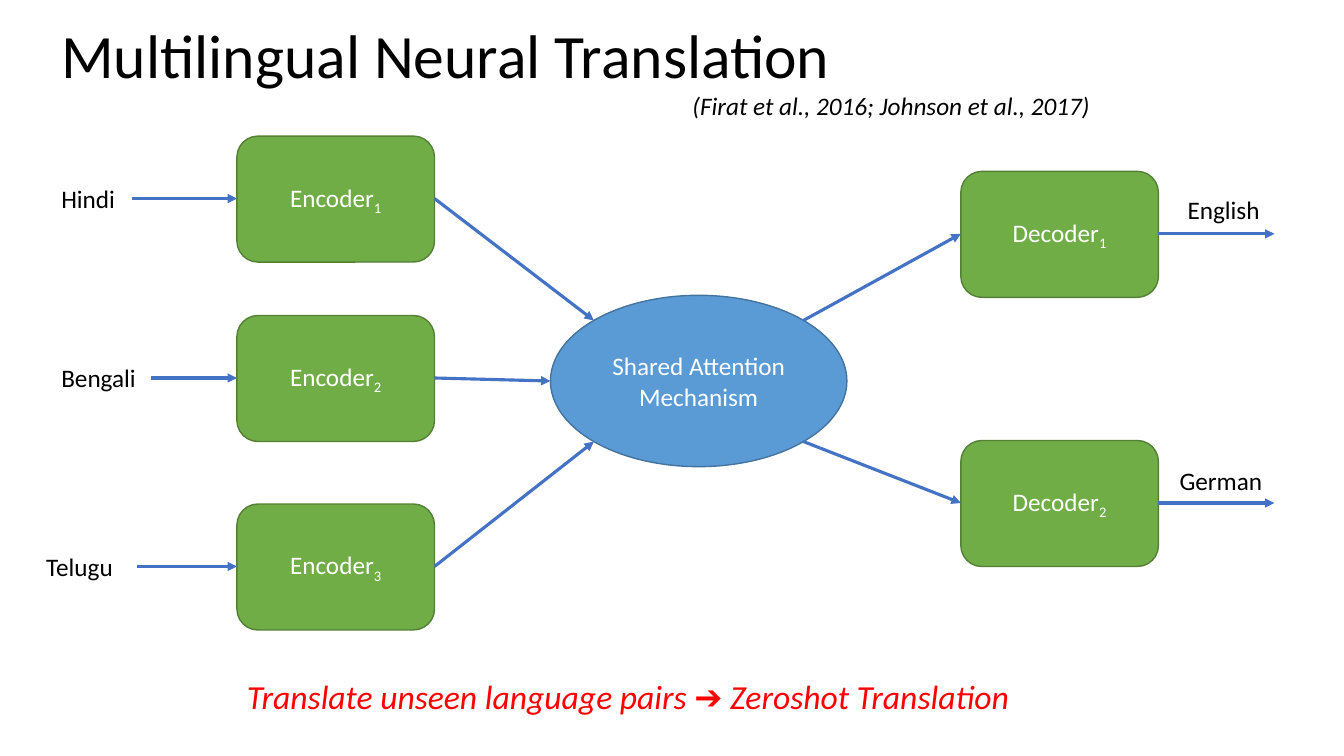
from math import sqrt

from lxml.etree import SubElement
from pptx import Presentation
from pptx.dml.color import RGBColor
from pptx.enum.shapes import MSO_CONNECTOR, MSO_SHAPE
from pptx.enum.text import MSO_ANCHOR, PP_ALIGN
from pptx.oxml.ns import qn
from pptx.util import Emu, Pt

SCALE = 9144  # EMU per px, 100 px to the inch
BLOCK_WIDTH, BLOCK_HEIGHT = 196, 125

# Language, label left, label width, arrow start, block top
SOURCES = [
    ("Hindi", 51, 80, 131, 135),
    ("Bengali", 51, 100, 150, 313),
    ("Telugu", 36, 100, 136, 500),
]
# Language, label left, label top, block top
TARGETS = [("English", 1168, 188, 170), ("German", 1160, 457, 437)]


def px(length):
    return Emu(round(length * SCALE))


def color(value):
    return RGBColor.from_string(value)


def write(frame, text, subscript="", size=18, fill="000000", italic=False,
          align=PP_ALIGN.LEFT, anchor=MSO_ANCHOR.TOP, spacing=None):
    frame.word_wrap = True
    frame.vertical_anchor = anchor
    para = frame.paragraphs[0]
    para.alignment = align
    para.line_spacing = spacing
    for part in filter(None, (text, subscript)):
        span = para.add_run()
        span.text = part
        span.font.name = "Calibri"
        span.font.size = Pt(size)
        span.font.italic = italic
        span.font.color.rgb = color(fill)
    if subscript:
        span.font._element.set("baseline", "-25000")


def add_label(page, box, text, **text_format):
    label = page.shapes.add_textbox(*map(px, box))
    write(label.text_frame, text, **text_format)


def add_node(page, kind, box, fill, outline, text, subscript=""):
    node = page.shapes.add_shape(kind, *map(px, box))
    node.shadow.inherit = False
    node.fill.solid()
    node.fill.fore_color.rgb = color(fill)
    node.line.color.rgb = color(outline)
    node.line.width = Pt(1)
    write(node.text_frame, text, subscript, fill="FFFFFF",
          align=PP_ALIGN.CENTER, anchor=MSO_ANCHOR.MIDDLE)


def add_block(page, left, top, name, number):
    add_node(page, MSO_SHAPE.ROUNDED_RECTANGLE,
             (left, top, BLOCK_WIDTH, BLOCK_HEIGHT),
             "70AD47", "538035", name, str(number))


def add_arrow(page, start, end):
    arrow = page.shapes.add_connector(
        MSO_CONNECTOR.STRAIGHT, *map(px, start + end))
    arrow.line.color.rgb = color("4472C4")
    arrow.line.width = Pt(2.25)
    SubElement(arrow.line._get_or_add_ln(), qn("a:tailEnd"), type="triangle")
    SubElement(arrow._element.spPr, qn("a:effectLst"))


def add_encoders(page, left, ports):
    for number, (source, port) in enumerate(zip(SOURCES, ports), 1):
        language, label_left, label_width, arrow_start, top = source
        middle = top + BLOCK_HEIGHT // 2
        add_block(page, left, top, "Encoder", number)
        add_label(page, (label_left, middle - 20, label_width, 40), language)
        add_arrow(page, (arrow_start, middle), (left, middle))
        add_arrow(page, (left + BLOCK_WIDTH, middle), port)


def add_decoders(page, left, ports):
    right = left + BLOCK_WIDTH
    for number, (target, port) in enumerate(zip(TARGETS, ports), 1):
        language, label_left, label_top, top = target
        middle = top + BLOCK_HEIGHT // 2
        add_block(page, left, top, "Decoder", number)
        add_label(page, (label_left, label_top, 128, 40), language)
        add_arrow(page, port, (left, middle))
        add_arrow(page, (right, middle), (right + 115, middle))


def add_attention(page, box):
    """Draw the ellipse and return its ports on the left and right."""
    add_node(page, MSO_SHAPE.OVAL, box, "5B9BD5", "43739E",
             "Shared Attention Mechanism")
    left, top, width, height = box
    center_x, center_y = left + width / 2, top + height / 2
    reach_x, reach_y = width / sqrt(8), height / sqrt(8)
    upper, lower = center_y - reach_y, center_y + reach_y
    inputs = [(center_x - reach_x, upper), (left, center_y),
              (center_x - reach_x, lower)]
    outputs = [(center_x + reach_x, upper), (center_x + reach_x, lower)]
    return inputs, outputs


def main():
    deck = Presentation()
    deck.slide_width, deck.slide_height = px(1333), px(750)
    page = deck.slides.add_slide(deck.slide_layouts[6])

    # Heading and citation
    add_label(page, (51, 11, 1150, 94), "Multilingual Neural Translation",
              size=44, anchor=MSO_ANCHOR.MIDDLE, spacing=0.9)
    add_label(page, (677, 85, 484, 40),
              "(Firat et al., 2016; Johnson et al., 2017)", italic=True)

    # Translation network
    inputs, outputs = add_attention(page, (546, 293, 294, 170))
    add_encoders(page, 235, inputs)
    add_decoders(page, 953, outputs)

    # Takeaway
    add_label(page, (235, 666, 835, 50),
              "Translate unseen language pairs ➔ Zeroshot Translation",
              size=24, fill="FF0000", italic=True)

    deck.save("out.pptx")


if __name__ == "__main__":
    main()
